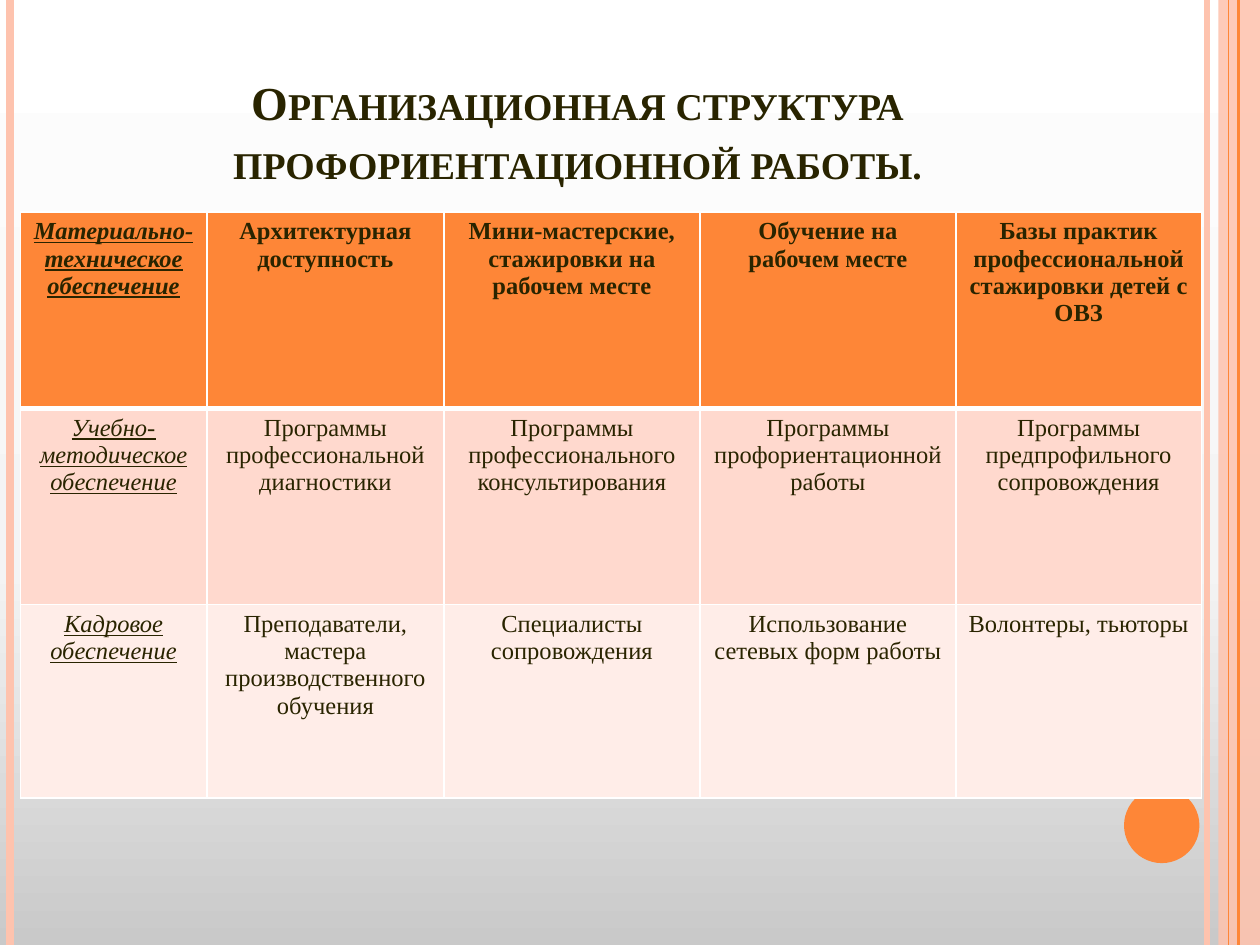
from lxml import etree
from pptx import Presentation
from pptx.dml.color import RGBColor
from pptx.enum.shapes import MSO_CONNECTOR, MSO_SHAPE
from pptx.enum.text import MSO_ANCHOR, PP_ALIGN
from pptx.oxml.ns import qn
from pptx.util import Cm, Pt

STRAIGHT = MSO_CONNECTOR.STRAIGHT
RECTANGLE, OVAL = MSO_SHAPE.RECTANGLE, MSO_SHAPE.OVAL
BOTTOM, CENTER = MSO_ANCHOR.BOTTOM, PP_ALIGN.CENTER
FONT = "Times New Roman"
DARK = RGBColor(0x29, 0x24, 0x00)
ORANGE = RGBColor(0xFE, 0x86, 0x37)
PEACH = RGBColor(0xFE, 0xC3, 0xAE)
PINK = RGBColor(0xFF, 0xD9, 0xCE)
PALE = RGBColor(0xFF, 0xED, 0xE8)
WHITE = RGBColor(0xFF, 0xFF, 0xFF)
SILVER = RGBColor(0xC9, 0xC9, 0xC9)
MIST = RGBColor(0xF4, 0xF4, 0xF4)


def write(frame, text, size, bold=False, italic=False, underline=False):
    para = frame.paragraphs[0]
    para.alignment = CENTER
    span = para.add_run()
    span.text = text
    font = span.font
    font.name, font.size, font.color.rgb = FONT, Pt(size), DARK
    font.bold, font.italic, font.underline = bold, italic, underline
    return span


def add_color(parent, color, alpha=None):
    node = etree.SubElement(parent, qn("a:srgbClr"), val=str(color))
    if alpha:
        etree.SubElement(node, qn("a:alpha"), val=str(alpha * 1000))


deck = Presentation()
deck.slide_width, deck.slide_height = Cm(25.4), Cm(19.05)
page = deck.slides.add_slide(deck.slide_layouts[5])

# Background: grey at the bottom, white at the top
backdrop = page.background.fill
backdrop.gradient()
backdrop.gradient_angle = 90
stops = page._element.find(".//" + qn("a:gsLst"))
for stop in list(stops):
    stops.remove(stop)
for position, color in [(0, SILVER), (40, MIST), (100, WHITE)]:
    add_color(etree.SubElement(stops, qn("a:gs"), pos=str(position * 1000)), color)

# Vertical stripes at both edges
band = page.shapes.add_shape(RECTANGLE, Cm(24.56), 0, Cm(0.84), deck.slide_height)
band.shadow.inherit = False
band.line.fill.background()
band.fill.solid()
band.fill.fore_color.rgb = PEACH
band_fill = band._element.spPr.find(qn("a:solidFill"))
band_fill.clear()
add_color(band_fill, PEACH, alpha=87)

for x, color, width in [(24.33, PEACH, 3), (0.2, PEACH, 4.5),
                        (24.97, ORANGE, 1.5), (24.77, ORANGE, 0.75)]:
    stripe = page.shapes.add_connector(STRAIGHT, Cm(x), 0, Cm(x), deck.slide_height)
    stripe.line.color.rgb = color
    stripe.line.width = Pt(width)
    etree.SubElement(stripe._element.spPr, qn("a:effectLst"))

# Corner circle
circle = page.shapes.add_shape(OVAL, Cm(22.66), Cm(15.88), Cm(1.52), Cm(1.52))
circle.shadow.inherit = False
circle.fill.solid()
circle.fill.fore_color.rgb = ORANGE
circle.line.fill.background()

# Title in small capitals
title = page.shapes.title
title.left, title.top, title.width, title.height = Cm(1.27), Cm(0.76), Cm(20.75), Cm(3.18)
title.text_frame.word_wrap = True
title.text_frame.vertical_anchor = BOTTOM
heading = write(title.text_frame, "Организационная структура профориентационной работы.", 27, bold=True)
heading.font._element.set("cap", "small")
title.text_frame.paragraphs[0].line_spacing = 1.05

# Table: the first column names the kind of support
ROWS = [
    ["Материально-техническое обеспечение", "Архитектурная доступность",
     "Мини-мастерские, стажировки на рабочем месте", "Обучение на рабочем месте",
     "Базы практик профессиональной стажировки детей с ОВЗ"],
    ["Учебно-методическое обеспечение", "Программы профессиональной диагностики",
     "Программы профессионального консультирования",
     "Программы профориентационной работы", "Программы предпрофильного сопровождения"],
    ["Кадровое обеспечение", "Преподаватели, мастера производственного обучения",
     "Специалисты сопровождения", "Использование сетевых форм работы",
     "Волонтеры, тьюторы"],
]
ROW_FILLS = [ORANGE, PINK, PALE]
ROW_HEIGHTS = [3.96, 3.96, 3.9]
COLUMN_WIDTHS = [3.76, 4.78, 5.16, 5.16, 4.95]
table = page.shapes.add_table(len(ROWS), len(COLUMN_WIDTHS), Cm(0.41), Cm(4.27),
                              Cm(sum(COLUMN_WIDTHS)), Cm(sum(ROW_HEIGHTS))).table
for column, width in zip(table.columns, COLUMN_WIDTHS):
    column.width = Cm(width)

for r, texts in enumerate(ROWS):
    table.rows[r].height = Cm(ROW_HEIGHTS[r])
    for c, text in enumerate(texts):
        cell = table.cell(r, c)
        cell.fill.solid()
        cell.fill.fore_color.rgb = ROW_FILLS[r]
        write(cell.text_frame, text, 14, bold=r == 0, italic=c == 0, underline=c == 0)
        # White borders, thicker below the header row
        weights = {"L": 1, "R": 1, "T": 3 if r == 1 else 1, "B": 3 if r == 0 else 1}
        properties = cell._tc.get_or_add_tcPr()
        for index, (side, weight) in enumerate(weights.items()):
            border = etree.Element(qn("a:ln" + side), w=str(Pt(weight)))
            add_color(etree.SubElement(border, qn("a:solidFill")), WHITE)
            properties.insert(index, border)

deck.save("out.pptx")
